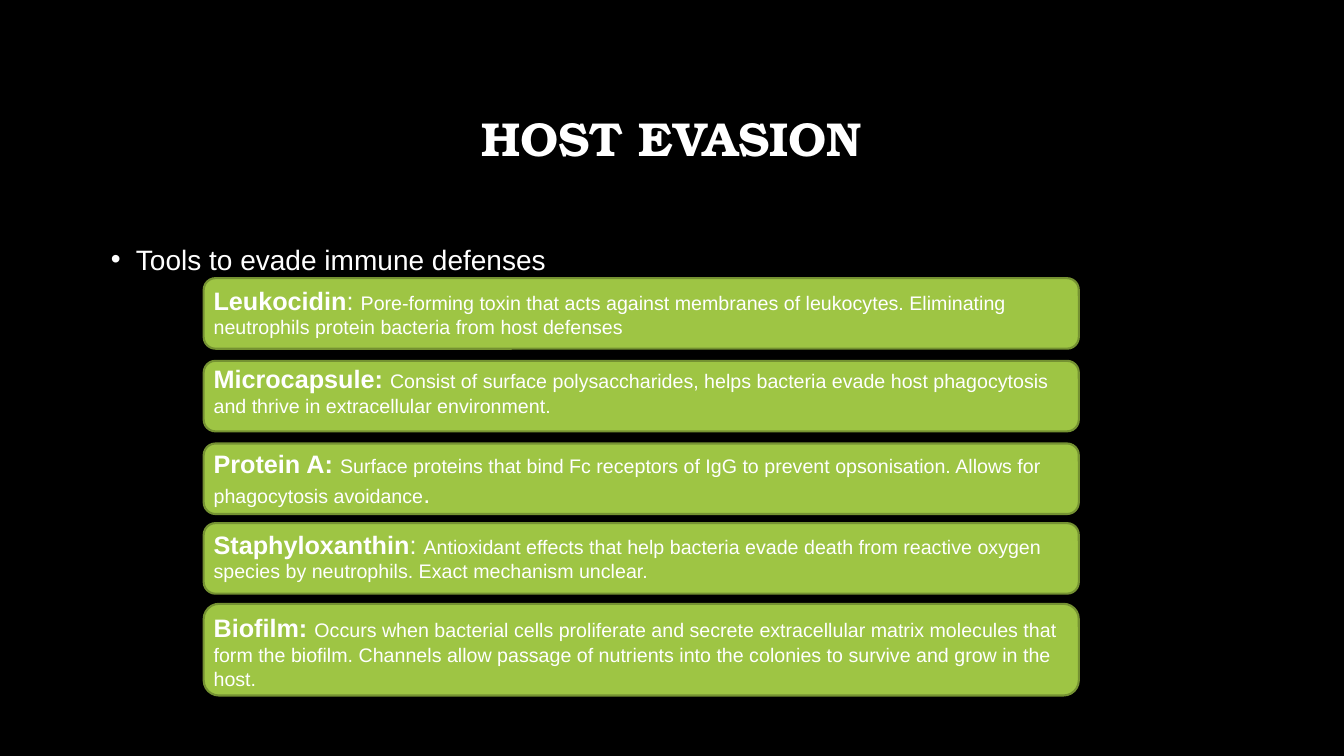
"""Build the Host Evasion slide listing tools that evade immune defenses."""
from dataclasses import dataclass

from lxml.etree import SubElement
from pptx import Presentation
from pptx.dml.color import RGBColor
from pptx.enum.shapes import MSO_SHAPE
from pptx.enum.text import MSO_ANCHOR, PP_ALIGN
from pptx.oxml.ns import qn
from pptx.slide import Slide
from pptx.text.text import TextFrame, _Paragraph
from pptx.util import Inches, Pt

BLACK = RGBColor(0x00, 0x00, 0x00)
WHITE = RGBColor(0xFF, 0xFF, 0xFF)
GREEN = RGBColor(0x9E, 0xC5, 0x44)
DARK_GREEN = RGBColor(0x75, 0x92, 0x32)
TITLE_FONT = "TeX Gyre Bonum"
BODY_FONT = "Arial"
CARD_LEFT, CARD_WIDTH = 2.02, 8.68


@dataclass(frozen=True)
class Span:
    text: str
    size: int = 14
    bold: bool = False
    font: str = BODY_FONT


@dataclass(frozen=True)
class Card:
    top: float
    text_top: float
    spans: tuple[Span, ...]
    height: float = 0.7
    text_height: float = 0.64


CARDS = (
    Card(2.76, 2.78, (
        Span("Leukocidin", 18, True),
        Span(": ", 18),
        Span("Pore-forming toxin that acts against membranes of leukocytes. "
             "Eliminating neutrophils protein bacteria from host defenses"),
    )),
    Card(3.58, 3.56, (
        Span("Microcapsule: ", 18, True),
        Span("Consist of surface polysaccharides, helps bacteria evade host "
             "phagocytosis and thrive in extracellular environment."),
    )),
    Card(4.4, 4.4, (
        Span("Protein A: ", 18, True),
        Span("Surface proteins that bind Fc receptors of IgG to prevent "
             "opsonisation. Allows for phagocytosis avoidance"),
        Span(".", 18),
    ), text_height=0.71),
    Card(5.19, 5.2, (
        Span("Staphyloxanthin", 18, True),
        Span(": ", 18),
        Span("Antioxidant effects that help bacteria evade death from reactive "
             "oxygen species by neutrophils. Exact mechanism unclear."),
    )),
    Card(5.99, 6.03, (
        Span("Biofilm: ", 18, True),
        Span("Occurs when bacterial cells proliferate and secrete extracellular "
             "matrix molecules that form the biofilm. Channels allow passage of "
             "nutrients into the colonies to survive and grow in the host."),
    ), height=0.91, text_height=0.88),
)


def add_spans(para: _Paragraph, spans: tuple[Span, ...]) -> None:
    """Add each span to the paragraph as a white run."""
    for span in spans:
        run = para.add_run()
        run.text = span.text
        run.font.name = span.font
        run.font.size = Pt(span.size)
        run.font.bold = span.bold
        run.font.color.rgb = WHITE


def add_text(page: Slide, left: float, top: float, width: float, height: float,
             spans: tuple[Span, ...]) -> TextFrame:
    """Add a wrapping text box with one paragraph and return its frame."""
    box = page.shapes.add_textbox(Inches(left), Inches(top), Inches(width), Inches(height))
    frame = box.text_frame
    frame.word_wrap = True
    add_spans(frame.paragraphs[0], spans)
    return frame


def add_bullet(para: _Paragraph) -> None:
    """Give the paragraph a hanging round bullet."""
    properties = para._p.get_or_add_pPr()
    properties.set("marL", str(Inches(0.25)))
    properties.set("indent", str(Inches(-0.25)))
    SubElement(properties, qn("a:buFont")).set("typeface", BODY_FONT)
    SubElement(properties, qn("a:buChar")).set("char", "•")


def add_panel(page: Slide, card: Card) -> None:
    """Draw the green rounded panel of a card."""
    panel = page.shapes.add_shape(
        MSO_SHAPE.ROUNDED_RECTANGLE, Inches(CARD_LEFT), Inches(card.top),
        Inches(CARD_WIDTH), Inches(card.height))
    panel.shadow.inherit = False
    panel.fill.solid()
    panel.fill.fore_color.rgb = GREEN
    panel.line.color.rgb = DARK_GREEN
    panel.line.width = Pt(1.5)


def main() -> None:
    """Build and save the deck."""
    deck = Presentation()
    deck.slide_width, deck.slide_height = Inches(13.33), Inches(7.5)
    page = deck.slides.add_slide(deck.slide_layouts[6])
    page.background.fill.solid()
    page.background.fill.fore_color.rgb = BLACK

    title = add_text(page, 1, 0.67, 11.32, 1.45,
                     (Span("HOST EVASION", 34, True, TITLE_FONT),))
    title.vertical_anchor = MSO_ANCHOR.MIDDLE
    title.paragraphs[0].alignment = PP_ALIGN.CENTER
    title.paragraphs[0].line_spacing = 0.9

    body = add_text(page, 1, 2.29, 11.32, 4.04,
                    (Span("Tools to evade immune defenses", 20),))
    body.paragraphs[0].line_spacing = 1.2
    body.paragraphs[0].space_before = Pt(10)
    add_bullet(body.paragraphs[0])

    for card in CARDS:
        add_panel(page, card)
    for card in CARDS:
        add_text(page, CARD_LEFT, card.text_top, CARD_WIDTH, card.text_height, card.spans)

    deck.save("out.pptx")


if __name__ == "__main__":
    main()
